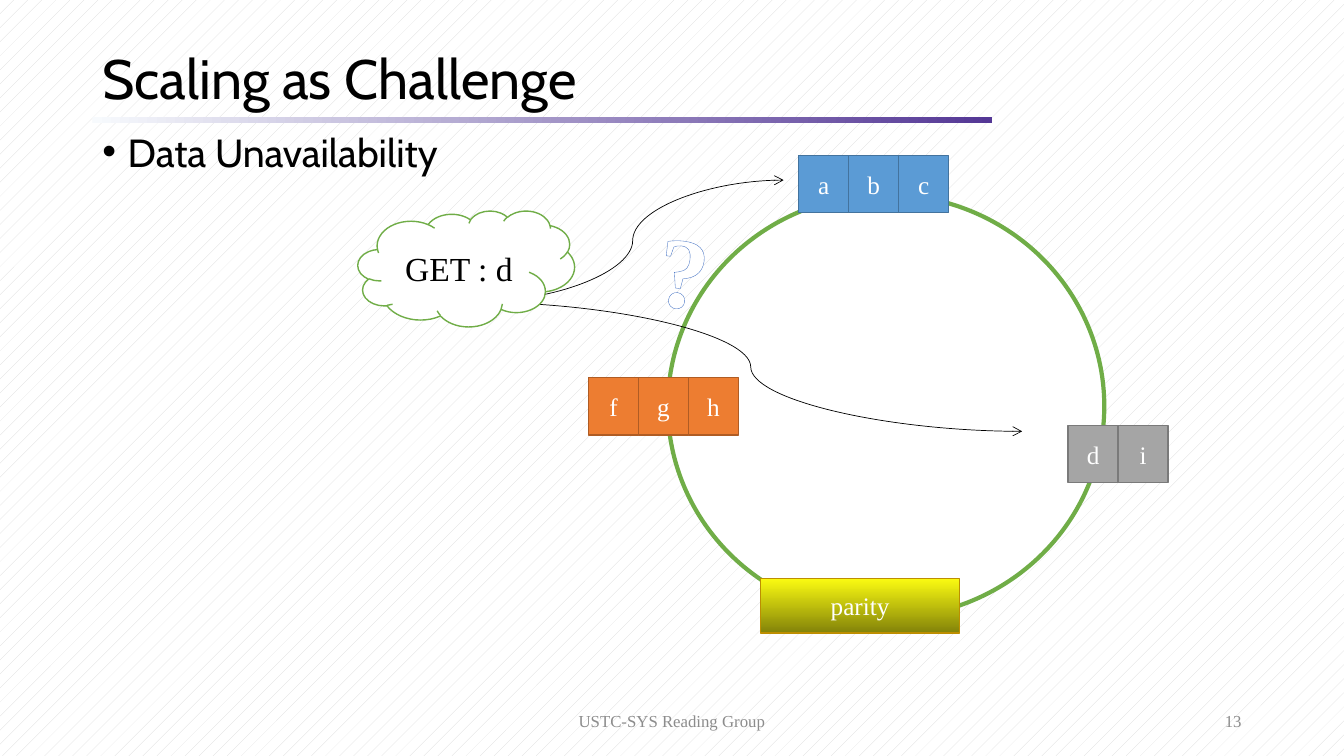
from lxml import etree
from pptx import Presentation
from pptx.dml.color import RGBColor
from pptx.enum.dml import MSO_PATTERN_TYPE as Pattern
from pptx.enum.shapes import MSO_CONNECTOR as Connector, MSO_SHAPE as Shape
from pptx.enum.text import MSO_ANCHOR as Anchor, PP_ALIGN as Align
from pptx.oxml.ns import qn
from pptx.util import Cm, Pt


def rgb(value):
    return RGBColor.from_string(value)


class Board:
    heading_font = "Cabin"
    label_font = "Times New Roman"
    black, white, muted = "000000", "FFFFFF", "8C8C8C"
    cell_width, cell_height = 1.26, 1.44

    def __init__(self, presentation):
        self.slide = presentation.slides.add_slide(presentation.slide_layouts[6])
        self.shapes = self.slide.shapes

    def background(self, fore, back):
        fill = self.slide.background.fill
        fill.patterned()
        fill.pattern = Pattern.PERCENT_5
        fill.fore_color.rgb = rgb(fore)
        fill.back_color.rgb = rgb(back)

    def style(self, font, size, color, name, bold=None):
        font.size = Pt(size)
        font.name = name
        font.color.rgb = rgb(color)
        font.bold = bold

    def text(self, content, box, size, color=black, name=label_font,
             align=Align.LEFT, anchor=Anchor.TOP, spacing=None, bullet=False):
        textbox = self.shapes.add_textbox(*map(Cm, box))
        frame = textbox.text_frame
        frame.word_wrap = True
        frame.vertical_anchor = anchor
        paragraph = frame.paragraphs[0]
        paragraph.text = content
        paragraph.alignment = align
        paragraph.line_spacing = spacing
        if bullet:
            props = paragraph._p.get_or_add_pPr()
            props.set("marL", str(Cm(0.64)))
            props.set("indent", str(-Cm(0.64)))
            etree.SubElement(props, qn("a:buFont")).set("typeface", "Arial")
            etree.SubElement(props, qn("a:buChar")).set("char", "•")
        self.style(paragraph.font, size, color, name)
        return textbox

    def outlined_text(self, content, box, size, outline, width, rotation):
        textbox = self.text(content, box, size, self.white, align=Align.CENTER)
        textbox.rotation = rotation
        run = textbox.text_frame.paragraphs[0].runs[0]
        self.style(run.font, size, self.white, self.label_font, True)
        line = etree.Element(qn("a:ln"), w=str(Pt(width)))
        solid = etree.SubElement(line, qn("a:solidFill"))
        etree.SubElement(solid, qn("a:srgbClr"), val=outline)
        run._r.get_or_add_rPr().insert(0, line)

    def shape(self, kind, box, fill, line=None, width=1, label="", angle=0):
        shape = self.shapes.add_shape(kind, *map(Cm, box))
        shape.shadow.inherit = False
        if isinstance(fill, tuple):
            shape.fill.gradient()
            shape.fill.gradient_angle = angle
            for stop, color in zip(shape.fill.gradient_stops, fill):
                stop.color.rgb = rgb(color)
        else:
            shape.fill.solid()
            shape.fill.fore_color.rgb = rgb(fill)
        if line:
            shape.line.color.rgb = rgb(line)
            shape.line.width = Pt(width)
        else:
            shape.line.fill.background()
        if label:
            frame = shape.text_frame
            frame.vertical_anchor = Anchor.MIDDLE
            paragraph = frame.paragraphs[0]
            paragraph.text = label
            paragraph.alignment = Align.CENTER
            self.style(paragraph.font, 18, self.white, self.label_font)

    def node(self, keys, left, top, fill, line):
        for index, key in enumerate(keys):
            box = (left + index * self.cell_width, top,
                   self.cell_width, self.cell_height)
            self.shape(Shape.RECTANGLE, box, fill, line, label=key)

    def curved_arrow(self, start, end):
        arrow = self.shapes.add_connector(Connector.CURVE, *map(Cm, start + end))
        arrow.line.color.rgb = rgb(self.black)
        arrow.line.width = Pt(0.5)
        line = arrow.line._get_or_add_ln()
        etree.SubElement(line, qn("a:tailEnd")).set("type", "arrow")
        etree.SubElement(arrow._element.spPr, qn("a:effectLst"))


def main():
    presentation = Presentation()
    presentation.slide_width = Cm(33.87)
    presentation.slide_height = Cm(19.05)
    board = Board(presentation)
    board.background("D9D9D9", "FFFFFF")

    board.shape(Shape.RECTANGLE, (2.33, 2.95, 22.66, 0.14), ("F7FAFD", "543795"))
    board.text("Scaling as Challenge", (2.33, 1.1, 29.21, 1.9), 39.6,
               name=board.heading_font, anchor=Anchor.MIDDLE, spacing=0.9)
    board.text("Data Unavailability", (2.33, 3.33, 29.21, 13.8), 28,
               name=board.heading_font, spacing=0.8, bullet=True)
    board.text("USTC-SYS Reading Group", (11.22, 17.66, 11.43, 1.01), 12,
               board.muted, align=Align.CENTER, anchor=Anchor.MIDDLE)
    board.text("13", (23.92, 17.66, 7.62, 1.01), 12,
               board.muted, align=Align.RIGHT, anchor=Anchor.MIDDLE)

    board.shape(Shape.OVAL, (16.83, 4.9, 11, 10.67), "FFFFFF", "70AD47", 3)
    board.node("fgh", 14.83, 9.52, "ED7D31", "AF5C24")
    board.node("abc", 20.13, 3.92, "5B9BD5", "43739E")
    board.node("di", 26.92, 10.72, "A5A5A5", "7A7A7A")
    board.shape(Shape.RECTANGLE, (19.17, 14.58, 5.01, 1.37),
                ("FBFB11", "838309"), "BD8E00", label="parity", angle=270)

    board.curved_arrow((12.14, 7.59), (19.75, 4.54))
    board.curved_arrow((12.08, 7.62), (25.76, 10.87))
    board.outlined_text("?", (15.47, 5.1, 3.53, 3.33), 72, "4472C4", 0.8, 7)
    board.shape(Shape.CLOUD, (9.02, 5.31, 5.46, 2.92), "FFFFFF", "70AD47")
    board.text("GET : d", (9.96, 6.12, 4.52, 1.27), 24)

    presentation.save("out.pptx")


if __name__ == "__main__":
    main()
